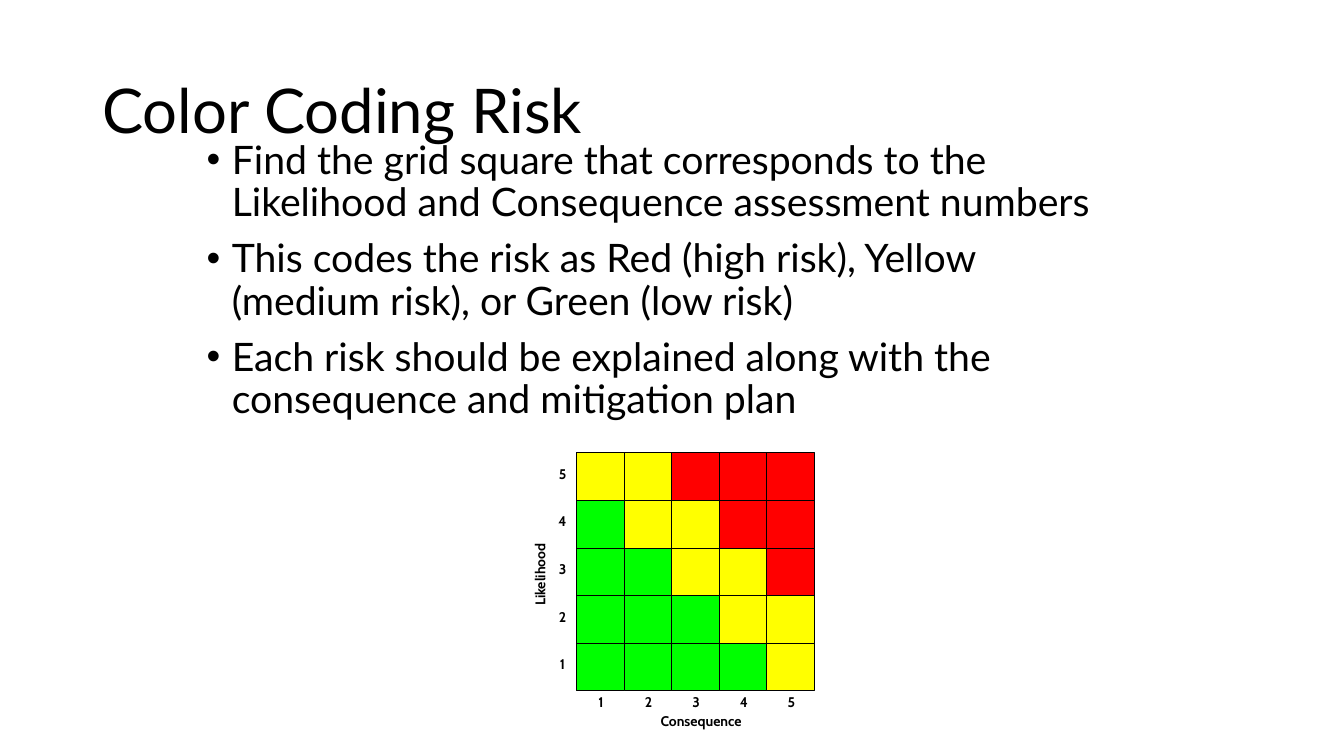
import dataclasses

import pptx
import pptx.dml.color
import pptx.enum.shapes
import pptx.enum.text
import pptx.oxml
import pptx.oxml.ns
import pptx.util

Pt = pptx.util.Pt
RGB = pptx.dml.color.RGBColor.from_string
Align = pptx.enum.text.PP_ALIGN
Anchor = pptx.enum.text.MSO_ANCHOR
AutoSize = pptx.enum.text.MSO_AUTO_SIZE


@dataclasses.dataclass(frozen=True)
class Theme:
    text_color: str = "000000"
    main_font: str = "Lato"
    label_font: str = "Cabin"
    title_size: int = 44
    body_size: int = 28
    label_size: int = 10
    outline_width: float = 0.75
    indent: int = 18


@dataclasses.dataclass(frozen=True)
class Box:
    left: float
    top: float
    width: float
    height: float

    def lengths(self):
        return [Pt(value) for value in (self.left, self.top, self.width, self.height)]


THEME = Theme()
RISK_COLORS = {"G": "00FF00", "Y": "FFFF00", "R": "FF0000"}
RISK_ROWS = ["YYRRR", "GYYRR", "GGYYR", "GGGYY", "GGGGY"]
BULLETS = [
    "Find the grid square that corresponds to the Likelihood and Consequence assessment numbers",
    "This codes the risk as Red (high risk), Yellow (medium risk), or Green (low risk)",
    "Each risk should be explained along with the consequence and mitigation plan",
]


def apply_format(target, values):
    for name, value in values.items():
        setattr(target, name, value)


def format_font(font, name, size, bold=False):
    apply_format(font, {"name": name, "size": Pt(size), "bold": bold})
    font.color.rgb = RGB(THEME.text_color)


def place(shape, box):
    names = ("left", "top", "width", "height")
    apply_format(shape, dict(zip(names, box.lengths())))


def add_bullet(paragraph):
    properties = paragraph._p.get_or_add_pPr()
    properties.set("marL", str(Pt(THEME.indent)))
    properties.set("indent", str(Pt(-THEME.indent)))
    namespace = pptx.oxml.ns.nsdecls("a")
    for markup in ('buFont {} typeface="Arial"', 'buChar {} char="•"'):
        properties.append(pptx.oxml.parse_xml(f"<a:{markup.format(namespace)}/>"))


def build_title(slide, box):
    title = slide.shapes.title
    place(title, box)
    title.text_frame.text = "Color Coding Risk"
    apply_format(title.text_frame, {
        "vertical_anchor": Anchor.MIDDLE, "auto_size": AutoSize.NONE, "word_wrap": True})
    paragraph = title.text_frame.paragraphs[0]
    apply_format(paragraph, {"alignment": Align.LEFT, "line_spacing": 0.9})
    format_font(paragraph.runs[0].font, THEME.main_font, THEME.title_size)


def build_body(slide, box):
    body = slide.placeholders[1]
    place(body, box)
    body.text_frame.text = "\n".join(BULLETS)
    apply_format(body.text_frame, {
        "vertical_anchor": Anchor.TOP, "auto_size": AutoSize.NONE, "word_wrap": True})
    for paragraph in body.text_frame.paragraphs:
        apply_format(paragraph, {
            "alignment": Align.LEFT, "line_spacing": 0.9, "space_before": Pt(10)})
        add_bullet(paragraph)
        format_font(paragraph.runs[0].font, THEME.main_font, THEME.body_size)


def add_label(group, text, center_x, center_y, width=24, rotation=0):
    height = 19.4
    box = Box(center_x - width / 2, center_y - height / 2, width, height)
    label = group.shapes.add_textbox(*box.lengths())
    label.rotation = rotation
    apply_format(label.text_frame, {
        "text": text, "word_wrap": True, "margin_left": 0, "margin_right": 0})
    paragraph = label.text_frame.paragraphs[0]
    paragraph.alignment = Align.CENTER
    format_font(paragraph.runs[0].font, THEME.label_font, THEME.label_size, bold=True)


def add_cell(group, box, color):
    cell = group.shapes.add_shape(
        pptx.enum.shapes.MSO_SHAPE.RECTANGLE, *box.lengths())
    cell.shadow.inherit = False
    cell.fill.solid()
    cell.fill.fore_color.rgb = RGB(color)
    cell.line.color.rgb = RGB(THEME.text_color)
    cell.line.width = Pt(THEME.outline_width)


def build_risk_matrix(slide, box):
    group = slide.shapes.add_group_shape()
    count = len(RISK_ROWS)
    cell = box.width / count
    bottom = box.top + box.height
    for row, risks in enumerate(RISK_ROWS):
        top = box.top + row * cell
        for column, risk in enumerate(risks):
            square = Box(box.left + column * cell, top, cell, cell)
            add_cell(group, square, RISK_COLORS[risk])
        add_label(group, str(count - row), box.left - 10, top + cell / 2 - 2)
        add_label(group, str(row + 1), box.left + (row + 0.5) * cell + 0.5, bottom + 8)
    add_label(group, "Consequence", box.left + box.width / 2 + 4, bottom + 21.8, 80)
    add_label(group, "Likelihood", box.left - 26, box.top + box.height / 2 + 2, 66, 270)


def main():
    presentation = pptx.Presentation()
    apply_format(presentation, {"slide_width": Pt(960), "slide_height": Pt(540)})
    slide = presentation.slides.add_slide(presentation.slide_layouts[1])
    build_title(slide, Box(66, 28.75, 828, 104.4))
    build_body(slide, Box(140.4, 96.5, 671, 205.2))
    build_risk_matrix(slide, Box(411.8, 323.5, 170, 170))
    presentation.save("out.pptx")


if __name__ == "__main__":
    main()
